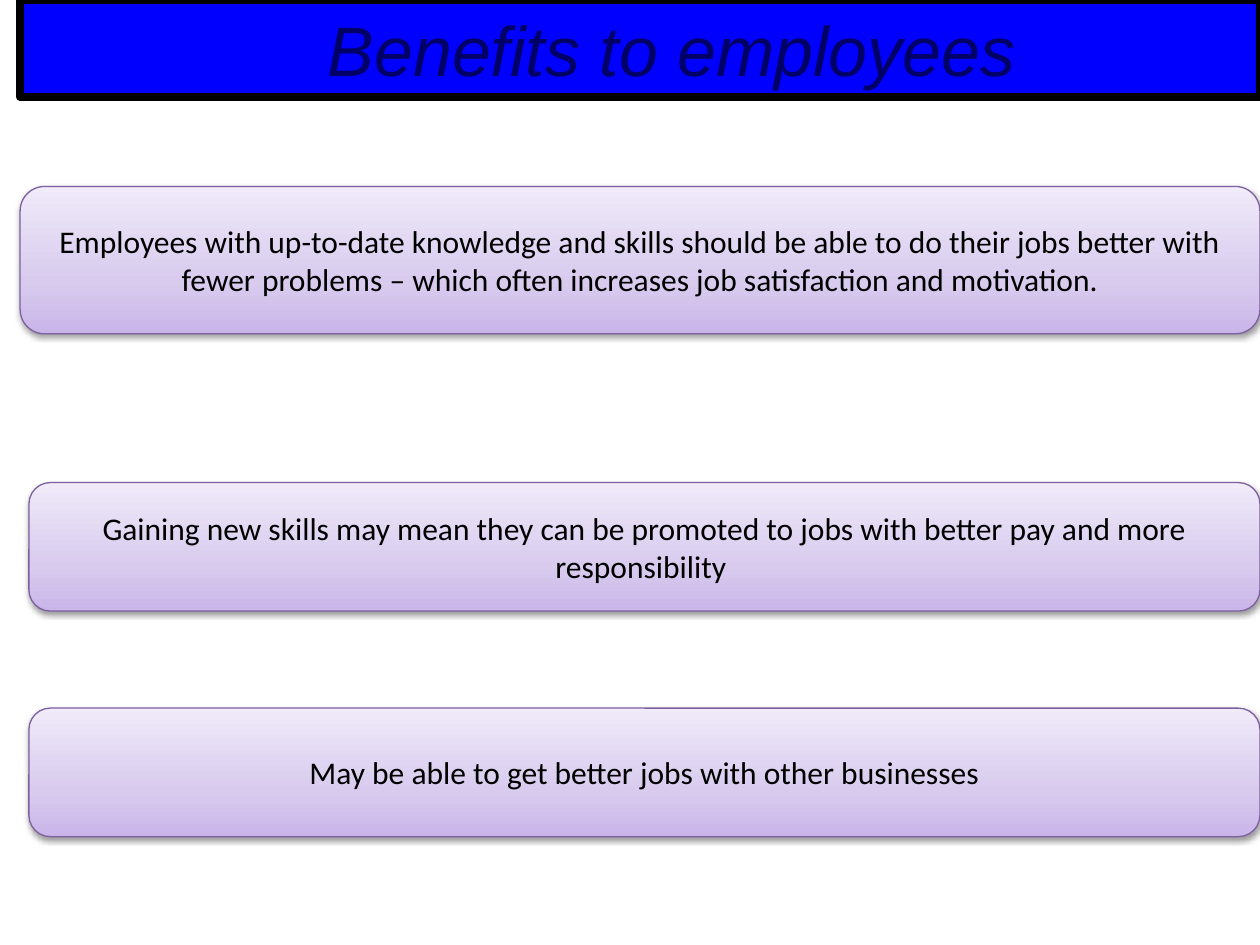
"""Build a slide listing the benefits of training to employees."""
import copy

import pptx
import pptx.dml.color
import pptx.enum.shapes
import pptx.enum.text
import pptx.oxml
import pptx.oxml.ns
import pptx.util

Inches = pptx.util.Inches
Pt = pptx.util.Pt
SHAPES = pptx.enum.shapes.MSO_SHAPE
ANCHOR = pptx.enum.text.MSO_ANCHOR

GRADIENT = [(0, "C9B5E8"), (0.35, "D8CBEE"), (1, "F0EAF9")]
SHADOW = (
    '<a:outerShdw xmlns:a="http://schemas.openxmlformats.org/drawingml/2006/main" '
    'blurRad="40000" dist="20000" dir="5400000" rotWithShape="0">'
    '<a:srgbClr val="000000"><a:alpha val="38000"/></a:srgbClr></a:outerShdw>'
)
BENEFITS = [
    (0.16, 1.48, 1.17, "Employees with up-to-date knowledge and skills should be able to do their "
     "jobs better with fewer problems – which often increases job satisfaction and motivation."),
    (0.23, 3.83, 1.02, "Gaining new skills may mean they can be promoted to jobs with better pay "
     "and more responsibility "),
    (0.23, 5.62, 1.02, "May be able to get better jobs with other businesses"),
]


def color(value):
    return pptx.dml.color.RGBColor.from_string(value)


def add_box(kind, left, top, height, text, font, size, ink, border, weight):
    box = page.shapes.add_shape(
        kind, Inches(left), Inches(top), Inches(10 - left), Inches(height))
    box.shadow.inherit = False
    box.line.color.rgb = color(border)
    box.line.width = Pt(weight)
    frame = box.text_frame
    frame.word_wrap = True
    frame.text = text
    para = frame.paragraphs[0]
    para.alignment = pptx.enum.text.PP_ALIGN.CENTER
    span = para.runs[0]
    span.font.name = font
    span.font.size = Pt(size)
    span.font.color.rgb = color(ink)
    return box


deck = pptx.Presentation()
deck.slide_width = Inches(10)
deck.slide_height = Inches(7.5)
page = deck.slides.add_slide(deck.slide_layouts[6])

title = add_box(SHAPES.RECTANGLE, 0.16, 0, 0.77, "Benefits to employees",
                "Arial", 40, "000066", "000000", 4.5)
title.fill.solid()
title.fill.fore_color.rgb = color("0000FF")
title.text_frame.margin_left = Inches(0.6)
title.text_frame.vertical_anchor = ANCHOR.TOP
title.text_frame.auto_size = pptx.enum.text.MSO_AUTO_SIZE.SHAPE_TO_FIT_TEXT
title.text_frame.paragraphs[0].runs[0].font.italic = True

for left, top, height, text in BENEFITS:
    box = add_box(SHAPES.ROUNDED_RECTANGLE, left, top, height, text,
                  "Calibri", 18, "000000", "7D60A0", 0.75)
    box.text_frame.vertical_anchor = ANCHOR.MIDDLE
    box.fill.gradient()
    box.fill.gradient_angle = 90
    properties = box.element.spPr
    stop_list = properties.find(".//" + pptx.oxml.ns.qn("a:gsLst"))
    stop_list.append(copy.deepcopy(stop_list[-1]))
    for stop, (position, shade) in zip(box.fill.gradient_stops, GRADIENT):
        stop.position = position
        stop.color.rgb = color(shade)
    effects = properties.find(pptx.oxml.ns.qn("a:effectLst"))
    effects.append(pptx.oxml.parse_xml(SHADOW))

deck.save("out.pptx")
